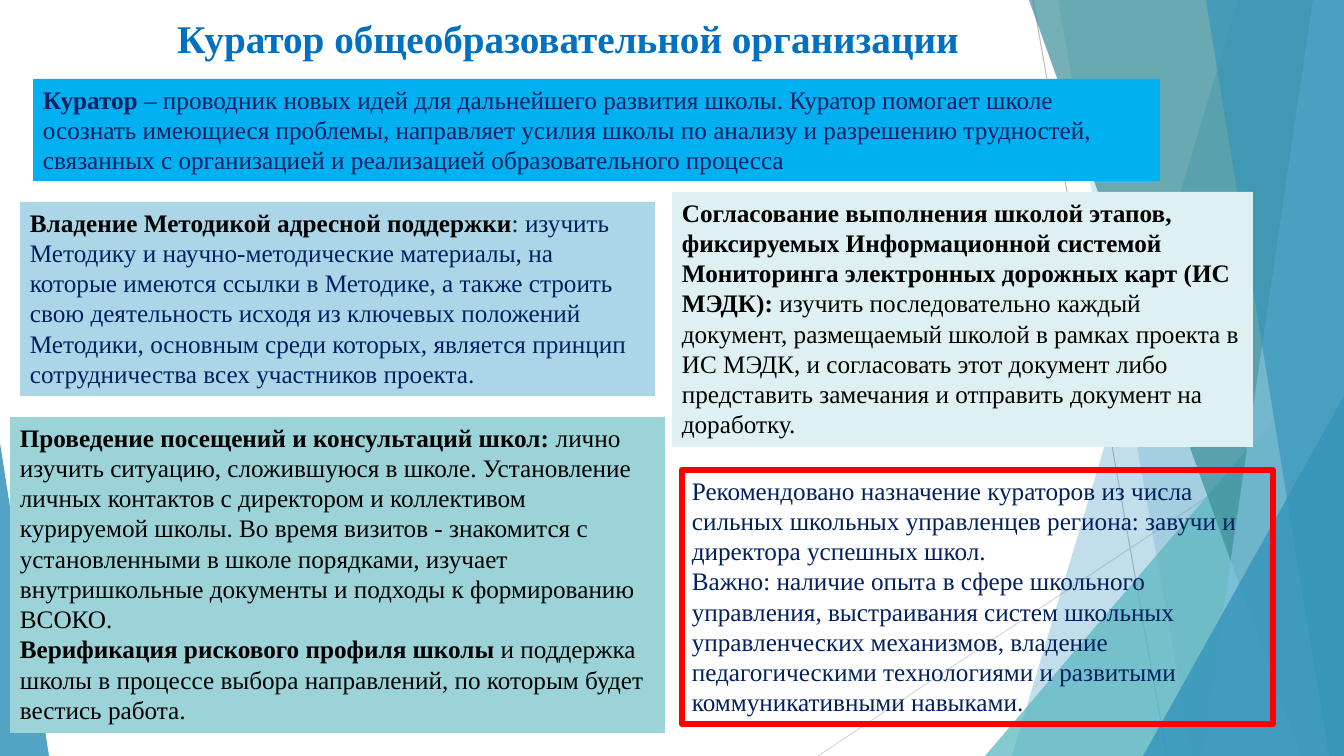
import pptx
import pptx.dml.color
import pptx.enum.shapes
import pptx.enum.text
import pptx.oxml
import pptx.oxml.ns
import pptx.util

RGBColor = pptx.dml.color.RGBColor
PX = 914400 / 100.8
WIDTH, HEIGHT = 1344, 756
FONT = "Times New Roman"

BLACK = RGBColor(0x00, 0x00, 0x00)
NAVY = RGBColor(0x00, 0x20, 0x60)
TITLE_BLUE = RGBColor(0x00, 0x70, 0xC0)
BRIGHT_BLUE = RGBColor(0x00, 0xB0, 0xF0)
PALE_BLUE = RGBColor(0xAA, 0xD6, 0xE7)
SOFT_TEAL = RGBColor(0x9B, 0xD3, 0xD9)
PALE_TEAL = RGBColor(0xDE, 0xF0, 0xF2)
RED = RGBColor(0xFF, 0x00, 0x00)
BLUE = RGBColor(0x34, 0x94, 0xBA)
LIGHT_BLUE = RGBColor(0x7F, 0xC1, 0xDB)
TEAL = RGBColor(0x58, 0xB6, 0xC0)
DARK_TEAL = RGBColor(0x3A, 0x8F, 0x98)
GREY = RGBColor(0xBF, 0xBF, 0xBF)
LIGHT_GREY = RGBColor(0xD9, 0xD9, 0xD9)


def px(*lengths):
    """Turn pixel lengths into EMU."""
    return [pptx.util.Emu(round(length * PX)) for length in lengths]


def add_text(para, text, color=BLACK, size=18, bold=False):
    span = para.add_run()
    span.text = text
    span.font.name = FONT
    span.font.size = pptx.util.Pt(size)
    span.font.bold = bold
    span.font.color.rgb = color


deck = pptx.Presentation()
deck.slide_width, deck.slide_height = px(WIDTH, HEIGHT)
page = deck.slides.add_slide(deck.slide_layouts[5])
shapes = page.shapes

# Thin lines behind the facets
for ends, color in [((1033, 0, 1167, HEIGHT), GREY), ((WIDTH, 406, 818, HEIGHT), LIGHT_GREY)]:
    line = shapes.add_connector(pptx.enum.shapes.MSO_CONNECTOR.STRAIGHT, *px(*ends))
    line.line.color.rgb = color
    line.line.width = pptx.util.Pt(0.75)
    line._element.spPr.append(pptx.oxml.parse_xml(
        f'<a:effectLst {pptx.oxml.ns.nsdecls("a")}/>'))

# Facets: a pair holds the left edge at top and bottom of a full-height panel;
# five numbers hold a triangle's left, top, width, height and apex position
facets = [
    ((1238, 1012), BLUE, 30),
    ((1058, 1192), BLUE, 20),
    ((985, 336, 359, 420, 1), TEAL, 72),
    ((1029, 1301), DARK_TEAL, 70),
    ((1313, 1202), LIGHT_BLUE, 70),
    ((1206, 1329), BLUE, 65),
    ((1143, 396, 201, 360, 1), BLUE, 80),
    ((0, 443, 49, 313, 0), BLUE, 85),
]
for outline, color, opacity in facets:
    if len(outline) == 2:
        top, bottom = outline
        builder = shapes.build_freeform(top, 0, scale=PX)
        builder.add_line_segments([(WIDTH, 0), (WIDTH, HEIGHT), (bottom, HEIGHT)], close=True)
        facet = builder.convert_to_shape()
    else:
        facet = shapes.add_shape(
            pptx.enum.shapes.MSO_SHAPE.ISOSCELES_TRIANGLE, *px(*outline[:4]))
        facet.adjustments[0] = outline[4]
    facet.shadow.inherit = False
    facet.line.fill.background()
    facet.fill.solid()
    facet.fill.fore_color.rgb = color
    color_node = facet._element.spPr.find(".//" + pptx.oxml.ns.qn("a:srgbClr"))
    color_node.append(pptx.oxml.parse_xml(
        f'<a:alpha {pptx.oxml.ns.nsdecls("a")} val="{opacity * 1000}"/>'))

title = shapes.title
title.left, title.top, title.width, title.height = px(167, 9, 810, 57)
title.text_frame.word_wrap = False
title.text_frame.auto_size = pptx.enum.text.MSO_AUTO_SIZE.NONE
title.text_frame.vertical_anchor = pptx.enum.text.MSO_ANCHOR.TOP
title_para = title.text_frame.paragraphs[0]
title_para.alignment = pptx.enum.text.PP_ALIGN.LEFT
add_text(title_para, "Куратор общеобразовательной организации",
         color=TITLE_BLUE, size=28, bold=True)

# Each box: place, fill, lead colour, body colour, paragraphs of (bold lead, body)
boxes = [
    ((33, 79, 1127, 102), BRIGHT_BLUE, NAVY, NAVY, [
        ("Куратор",
         " – проводник новых идей для дальнейшего развития школы. Куратор помогает школе "
         "осознать имеющиеся проблемы, направляет усилия школы по анализу и разрешению "
         "трудностей, связанных с организацией и реализацией образовательного процесса")]),
    ((20, 202, 635, 194), PALE_BLUE, BLACK, NAVY, [
        ("Владение Методикой адресной поддержки",
         ": изучить Методику и научно-методические материалы, на которые имеются ссылки в "
         "Методике, а также строить свою деятельность исходя из ключевых положений Методики, "
         "основным среди которых, является принцип сотрудничества всех участников проекта.")]),
    ((10, 417, 655, 316), SOFT_TEAL, BLACK, BLACK, [
        ("Проведение посещений и консультаций школ: ",
         "лично изучить ситуацию, сложившуюся в школе. Установление личных контактов с "
         "директором и коллективом курируемой школы. Во время визитов - знакомится с "
         "установленными в школе порядками, изучает внутришкольные документы и подходы к "
         "формированию ВСОКО."),
        ("Верификация рискового профиля школы ",
         "и поддержка школы в процессе выбора направлений, по которым будет вестись работа.")]),
    ((672, 192, 581, 255), PALE_TEAL, BLACK, BLACK, [
        ("Согласование выполнения школой этапов, фиксируемых Информационной системой "
         "Мониторинга электронных дорожных карт (ИС МЭДК): ",
         "изучить последовательно каждый документ, размещаемый школой в рамках проекта в ИС "
         "МЭДК, и согласовать этот документ либо представить замечания и отправить документ "
         "на доработку.")]),
    ((682, 470, 591, 254), None, NAVY, NAVY, [
        ("", "Рекомендовано назначение кураторов из числа сильных школьных управленцев "
             "региона: завучи и директора успешных школ."),
        ("", "Важно: наличие опыта в сфере школьного управления, выстраивания систем школьных "
             "управленческих механизмов, владение педагогическими технологиями и развитыми "
             "коммуникативными навыками.")]),
]
for place, fill, lead_color, body_color, paragraphs in boxes:
    box = shapes.add_textbox(*px(*place))
    if fill is None:
        box.line.color.rgb = RED
        box.line.width = pptx.util.Pt(4.5)
    else:
        box.fill.solid()
        box.fill.fore_color.rgb = fill
    frame = box.text_frame
    frame.word_wrap = True
    for index, (lead, body) in enumerate(paragraphs):
        para = frame.add_paragraph() if index else frame.paragraphs[0]
        if lead:
            add_text(para, lead, color=lead_color, bold=True)
        add_text(para, body, color=body_color)

deck.save("out.pptx")
